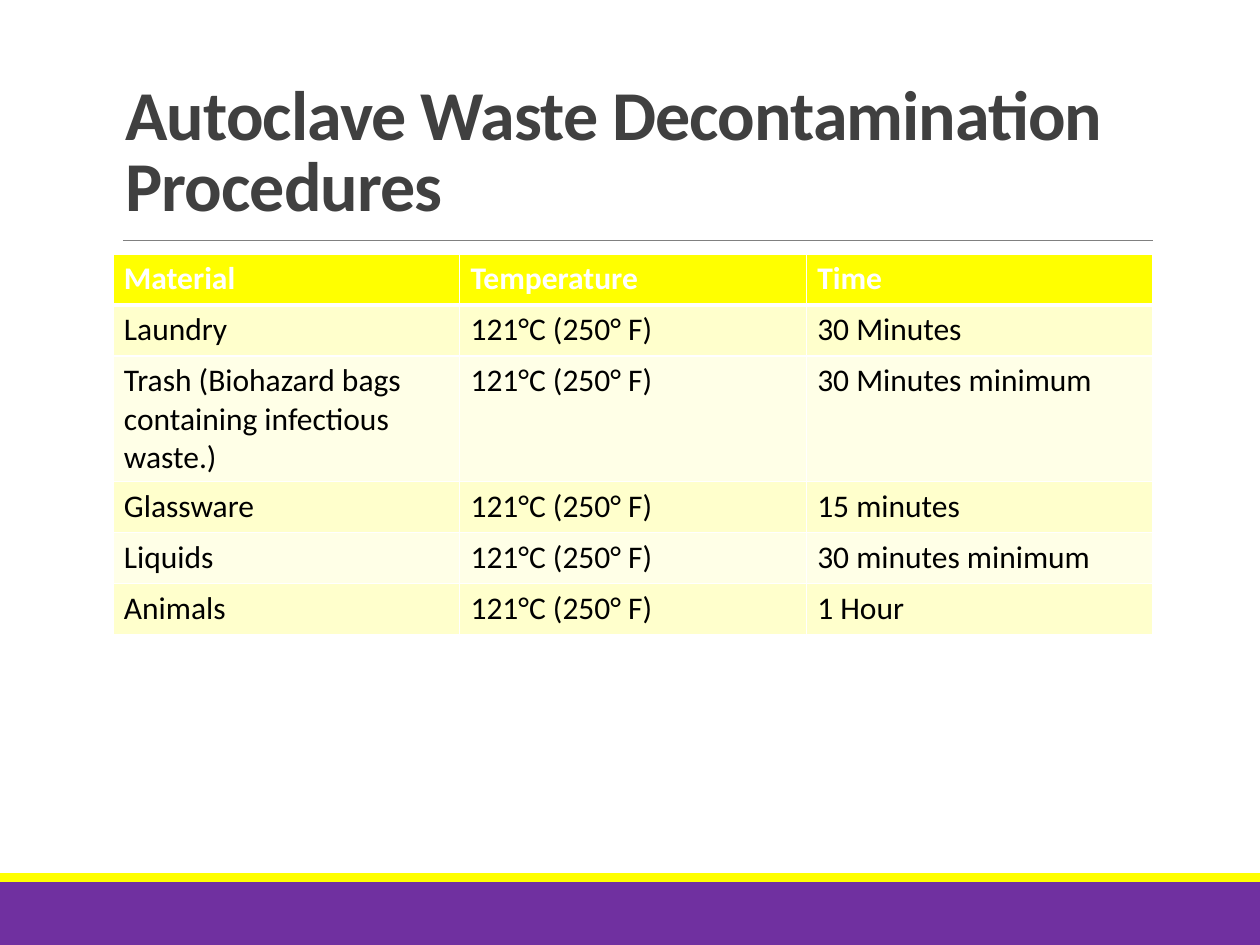
from lxml.etree import SubElement
from pptx import Presentation
from pptx.dml.color import RGBColor
from pptx.enum.shapes import MSO_CONNECTOR as Connector, MSO_SHAPE as Shape
from pptx.enum.text import MSO_ANCHOR as Anchor
from pptx.oxml.ns import qn
from pptx.util import Emu, Pt

SCALE = 914400 / 126  # EMU in one px
FONT = "Calibri"
WHITE, YELLOW, PURPLE = "FFFFFF", "FFFF00", "7030A0"
BANDS = ("FFFFCC", "FFFFE7")

TEMPERATURE = "121°C (250° F)"
HEADER = ("Material", "Temperature", "Time")
PROCEDURES = (
    ("Laundry", "30 Minutes"),
    ("Trash (Biohazard bags containing infectious waste.)", "30 Minutes minimum"),
    ("Glassware", "15 minutes"),
    ("Liquids", "30 minutes minimum"),
    ("Animals", "1 Hour"),
)


def px(length):
    return Emu(round(length * SCALE))


def color(value):
    return RGBColor.from_string(value)


def set_fill(target, value):
    target.fill.solid()
    target.fill.fore_color.rgb = color(value)


def add_run(paragraph, text, size, value, bold=False):
    run = paragraph.add_run()
    run.text = text
    run.font.name = FONT
    run.font.size = Pt(size)
    run.font.bold = bold
    run.font.color.rgb = color(value)
    return run


def set_borders(cell, bottom_width):
    properties = cell._tc.get_or_add_tcPr()
    widths = {"a:lnL": 1, "a:lnR": 1, "a:lnT": 1, "a:lnB": bottom_width}
    # Borders come before the fill in the cell properties
    for position, (side, width) in enumerate(widths.items()):
        line = SubElement(properties, qn(side), w=str(Pt(width)))
        fill = SubElement(line, qn("a:solidFill"))
        SubElement(fill, qn("a:srgbClr"), val=WHITE)
        properties.insert(position, line)


def add_footer(slide, left, top, width, height):
    stripe = 9
    bands = ((top + stripe, height - stripe, PURPLE), (top, stripe, YELLOW))
    for band_top, band_height, value in bands:
        band = slide.shapes.add_shape(
            Shape.RECTANGLE, px(left), px(band_top), px(width), px(band_height))
        band.shadow.inherit = False
        band.line.fill.background()
        set_fill(band, value)


def add_title(slide, left, top, width, height):
    # Rule below the heading
    rule_top = px(top + height + 8)
    rule = slide.shapes.add_connector(
        Connector.STRAIGHT, px(left + 10), rule_top, px(left + width), rule_top)
    rule.line.width = Pt(0.5)
    rule.line.color.rgb = color("808080")
    SubElement(rule.element.spPr, qn("a:effectLst"))

    # Heading
    title = slide.shapes.add_textbox(px(left), px(top), px(width), px(height))
    frame = title.text_frame
    frame.word_wrap = True
    frame.vertical_anchor = Anchor.BOTTOM
    paragraph = frame.paragraphs[0]
    paragraph.line_spacing = 0.85
    run = add_run(paragraph, "Autoclave Waste Decontamination Procedures",
                  40, "404040", bold=True)
    run._r.get_or_add_rPr().set("spc", "-50")


def add_procedures(slide, left, top, width, height):
    rows = [HEADER] + [(material, TEMPERATURE, time) for material, time in PROCEDURES]
    frame = slide.shapes.add_table(
        len(rows), len(HEADER), px(left), px(top), px(width), px(height))
    table = frame.table
    for row_number, texts in enumerate(rows):
        is_header = row_number == 0
        table.rows[row_number].height = px(51)
        for column_number, text in enumerate(texts):
            cell = table.cell(row_number, column_number)
            cell.margin_left = cell.margin_right = px(11)
            cell.margin_top = cell.margin_bottom = px(6)
            set_fill(cell, YELLOW if is_header else BANDS[(row_number - 1) % 2])
            set_borders(cell, 3 if is_header else 1)
            add_run(cell.text_frame.paragraphs[0], text, 18,
                    WHITE if is_header else "000000", bold=is_header)
    # The row with the long text grows to fill the full height
    frame.height = px(height)


def main():
    presentation = Presentation()
    presentation.slide_width, presentation.slide_height = px(1260), px(945)
    slide = presentation.slides.add_slide(presentation.slide_layouts[6])
    set_fill(slide.background, WHITE)
    add_footer(slide, 0, 873, 1260, 72)
    add_title(slide, 113, 32, 1040, 200)
    add_procedures(slide, 113, 254, 1040, 382)
    presentation.save("out.pptx")


if __name__ == "__main__":
    main()
